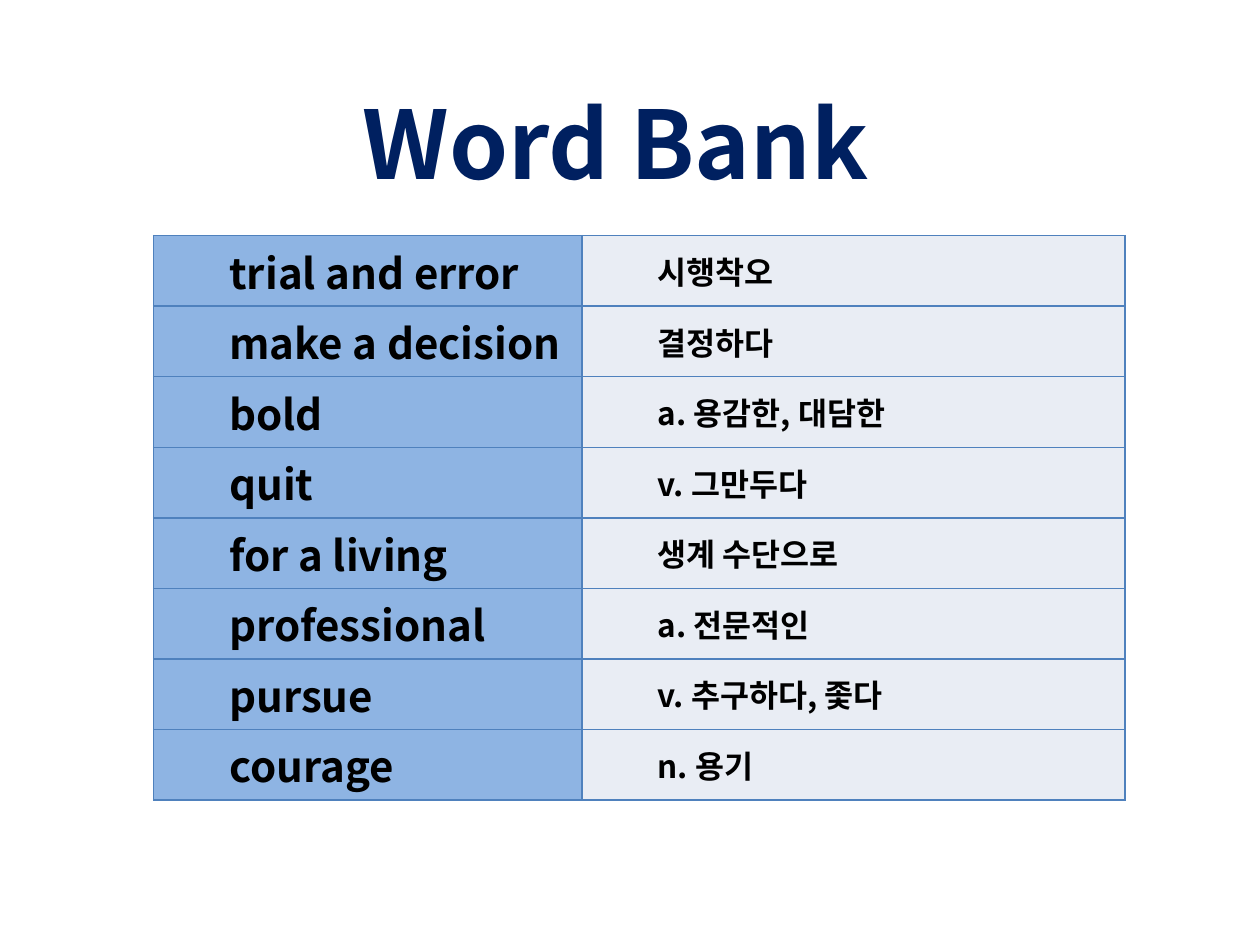
from dataclasses import dataclass

from lxml.etree import SubElement
from pptx import Presentation
from pptx.dml.color import RGBColor as RGB
from pptx.enum.text import MSO_ANCHOR as Anchor, PP_ALIGN as Align
from pptx.oxml.ns import qn
from pptx.util import Inches, Pt


@dataclass(frozen=True)
class Theme:
    font: str = "Noto Sans CJK KR"
    title: str = "002060"
    ink: str = "000000"
    word: str = "8EB4E3"
    sense: str = "E9EDF4"
    line: str = "4F81BD"
    title_size: int = 54
    word_size: int = 24
    sense_size: int = 18


@dataclass(frozen=True)
class Entry:
    word: str
    sense: str


THEME = Theme()
BANK = [
    Entry("trial and error", "시행착오"),
    Entry("make a decision", "결정하다"),
    Entry("bold", "a. 용감한, 대담한"),
    Entry("quit", "v. 그만두다"),
    Entry("for a living", "생계 수단으로"),
    Entry("professional", "a. 전문적인"),
    Entry("pursue", "v. 추구하다, 좇다"),
    Entry("courage", "n. 용기"),
]
COLS = (3.4, 4.31)
ROW = 0.56


def add_run(para, text: str, size: int, color: str) -> None:
    run = para.add_run()
    run.text = text
    font = run.font
    font.name, font.size, font.bold = THEME.font, Pt(size), True
    font.color.rgb = RGB.from_string(color)
    # Korean letters take the East Asian font
    SubElement(font._element, qn("a:ea"), typeface=THEME.font)


def add_edges(cell) -> None:
    props = cell._tc.get_or_add_tcPr()
    for spot, side in enumerate(("lnL", "lnR", "lnT", "lnB")):
        edge = SubElement(props, qn(f"a:{side}"), w=str(Pt(1)))
        fill = SubElement(edge, qn("a:solidFill"))
        SubElement(fill, qn("a:srgbClr"), val=THEME.line)
        props.insert(spot, edge)  # borders come before the fill


def fill_cell(cell, text: str, size: int, back: str) -> None:
    cell.fill.solid()
    cell.fill.fore_color.rgb = RGB.from_string(back)
    add_edges(cell)
    cell.vertical_anchor = Anchor.MIDDLE
    cell.margin_top = cell.margin_bottom = Inches(0.03)
    para = cell.text_frame.paragraphs[0]
    para.level = 1
    props = para._p.get_or_add_pPr()
    props.set("marL", str(Inches(0.5)))
    props.set("indent", "0")
    add_run(para, text, size, THEME.ink)


def add_title(slide) -> None:
    box = slide.shapes.add_textbox(
        Inches(2.17), Inches(0.62), Inches(5.43), Inches(1.01))
    frame = box.text_frame
    frame.word_wrap = True
    frame.vertical_anchor = Anchor.MIDDLE
    para = frame.paragraphs[0]
    para.alignment = Align.CENTER
    add_run(para, "Word Bank", THEME.title_size, THEME.title)


def add_bank(slide) -> None:
    table = slide.shapes.add_table(
        len(BANK), len(COLS), Inches(1.22), Inches(1.87),
        Inches(sum(COLS)), Inches(ROW * len(BANK))).table
    table.first_row = table.horz_banding = False
    for col, width in zip(table.columns, COLS):
        col.width = Inches(width)
    for row, entry in zip(table.rows, BANK):
        row.height = Inches(ROW)
        word, sense = row.cells
        fill_cell(word, entry.word, THEME.word_size, THEME.word)
        fill_cell(sense, entry.sense, THEME.sense_size, THEME.sense)


def main() -> None:
    deck = Presentation()
    deck.slide_width, deck.slide_height = Inches(10), Inches(7.5)
    slide = deck.slides.add_slide(deck.slide_layouts[6])
    add_title(slide)
    add_bank(slide)
    deck.save("out.pptx")


if __name__ == "__main__":
    main()
